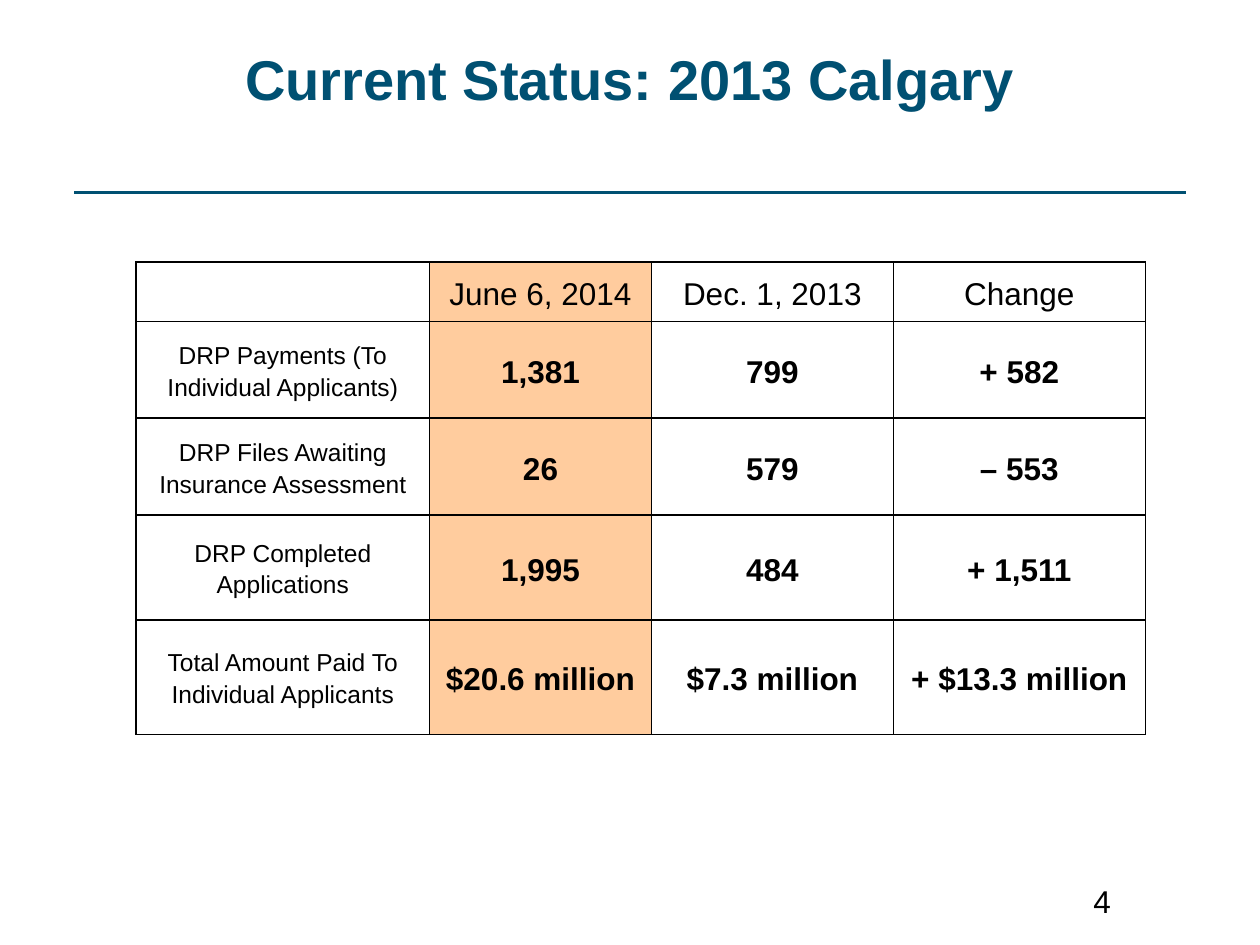
import pptx
import pptx.dml.color
import pptx.enum.shapes
import pptx.enum.text
import pptx.oxml
import pptx.oxml.ns
import pptx.util
from lxml import etree
from pptx.util import Inches

TEAL = pptx.dml.color.RGBColor(0x00, 0x50, 0x72)
ORANGE = pptx.dml.color.RGBColor(0xFF, 0x79, 0x00)
BLACK = pptx.dml.color.RGBColor(0, 0, 0)
ORANGE_ALPHA = 38
FONT = "Arial"
CENTER = pptx.enum.text.PP_ALIGN.CENTER
LEFT = pptx.enum.text.PP_ALIGN.LEFT

COLUMN_WIDTHS = [2.33, 1.76, 1.92, 2]
ROW_HEIGHTS = [0.47, 0.77, 0.77, 0.83, 0.91]
HIGHLIGHT_COLUMN = 1
ROWS = [
    ["", "June 6, 2014", "Dec. 1, 2013", "Change"],
    ["DRP Payments (To Individual Applicants)", "1,381", "799", "+ 582"],
    ["DRP Files Awaiting Insurance Assessment", "26", "579", "– 553"],
    ["DRP Completed Applications", "1,995", "484", "+ 1,511"],
    ["Total Amount Paid To\nIndividual Applicants",
     "$20.6 million", "$7.3 million", "+ $13.3 million"],
]


def write(p, text, size, color=BLACK, bold=False, align=LEFT):
    p.text = text
    p.alignment = align
    for r in p.runs:
        r.font.name = FONT
        r.font.size = pptx.util.Pt(size)
        r.font.bold = bold
        r.font.color.rgb = color


def add_text(slide, box, text, size, **style):
    tf = slide.shapes.add_textbox(*map(Inches, box)).text_frame
    tf.word_wrap = True
    write(tf.paragraphs[0], text, size, **style)


def add_rule(slide, left, right, y):
    s = slide.shapes.add_connector(
        pptx.enum.shapes.MSO_CONNECTOR.STRAIGHT,
        Inches(left), Inches(y), Inches(right), Inches(y))
    s.line.color.rgb = TEAL
    s.line.width = pptx.util.Pt(1.5)
    etree.SubElement(s._element.spPr, pptx.oxml.ns.qn("a:effectLst"))


def set_borders(cell):
    """Draw 1 pt black lines on all four sides of a cell."""
    props = cell._tc.get_or_add_tcPr()
    for i, side in enumerate(("lnL", "lnR", "lnT", "lnB")):
        props.insert(i, pptx.oxml.parse_xml(
            f'<a:{side} {pptx.oxml.ns.nsdecls("a")} w="{pptx.util.Pt(1)}">'
            f'<a:solidFill><a:srgbClr val="{BLACK}"/></a:solidFill></a:{side}>'))


def set_fill(cell, highlighted):
    if not highlighted:
        cell.fill.background()
        return
    cell.fill.solid()
    cell.fill.fore_color.rgb = ORANGE
    color = cell._tc.tcPr.find(".//" + pptx.oxml.ns.qn("a:srgbClr"))
    etree.SubElement(color, pptx.oxml.ns.qn("a:alpha"),
                     val=str(ORANGE_ALPHA * 1000))


def format_cell(cell, text, row, column):
    cell.vertical_anchor = pptx.enum.text.MSO_ANCHOR.MIDDLE
    cell.margin_left = cell.margin_right = Inches(0.07)
    cell.margin_top = cell.margin_bottom = 0
    p = cell.text_frame.paragraphs[0]
    write(p, text, 18 if column else 14,
          bold=row > 0 and column > 0, align=CENTER)
    p.line_spacing = 1.15
    set_fill(cell, column == HIGHLIGHT_COLUMN)
    set_borders(cell)


def add_status_table(slide, left, top):
    table = slide.shapes.add_table(
        len(ROWS), len(COLUMN_WIDTHS), Inches(left), Inches(top),
        Inches(sum(COLUMN_WIDTHS)), Inches(sum(ROW_HEIGHTS))).table
    table.first_row = table.horz_banding = False
    for column, width in zip(table.columns, COLUMN_WIDTHS):
        column.width = Inches(width)
    for row, height in zip(table.rows, ROW_HEIGHTS):
        row.height = Inches(height)
    for i, texts in enumerate(ROWS):
        for j, text in enumerate(texts):
            format_cell(table.cell(i, j), text, i, j)


def main():
    prs = pptx.Presentation()
    prs.slide_width, prs.slide_height = Inches(10), Inches(7.5)
    slide = prs.slides.add_slide(prs.slide_layouts[6])
    add_rule(slide, 0.59, 9.41, 1.53)
    add_text(slide, (0.5, 0.3, 9, 1.25), "Current Status: 2013 Calgary", 32,
             color=TEAL, bold=True, align=CENTER)
    add_text(slide, (8.58, 6.95, 1.17, 0.4), "4", 18)
    add_status_table(slide, 1.08, 2.08)
    prs.save("out.pptx")


if __name__ == "__main__":
    main()
